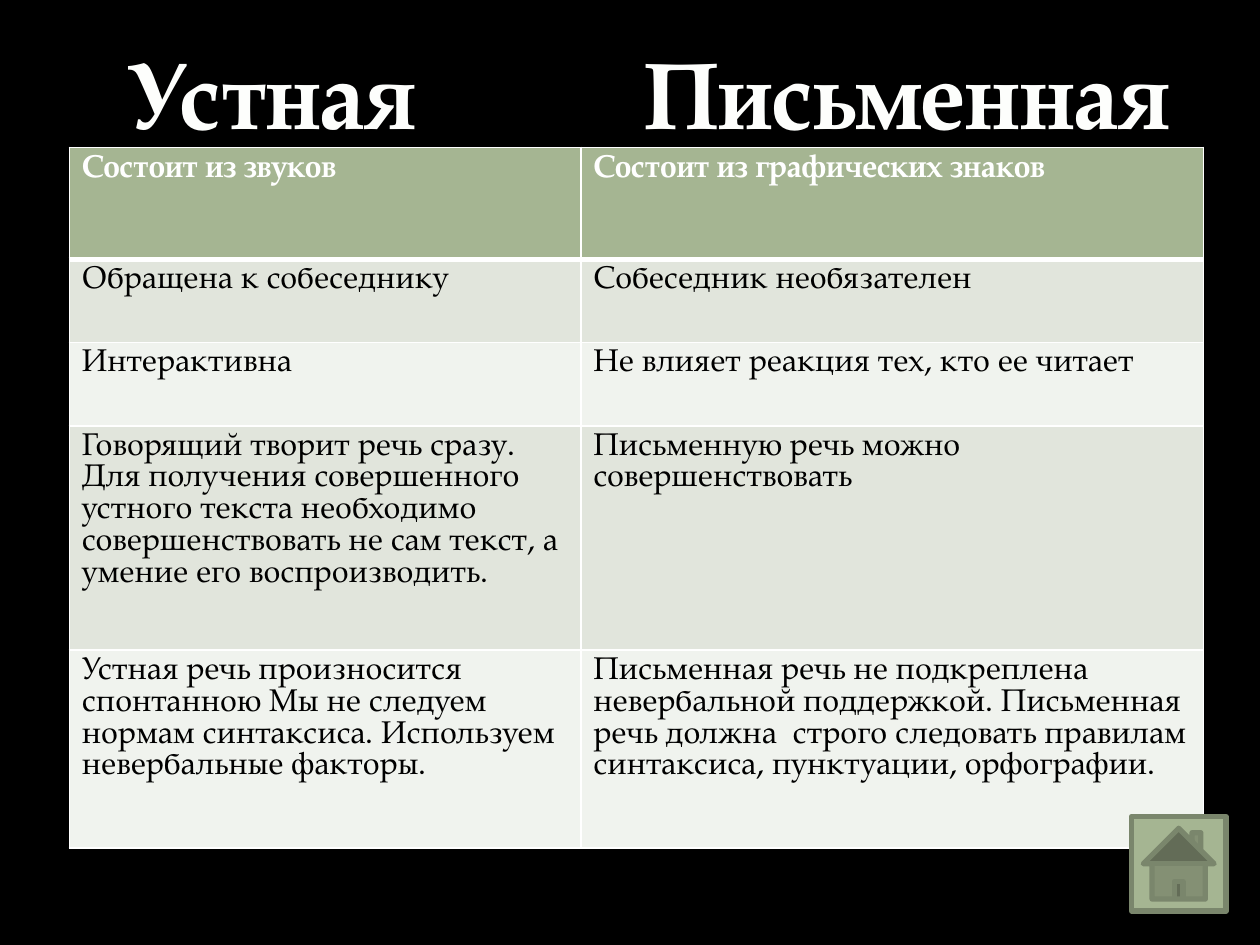
from dataclasses import dataclass

from lxml.etree import SubElement
from pptx import Presentation
from pptx.dml.color import RGBColor
from pptx.enum.shapes import MSO_SHAPE
from pptx.enum.text import MSO_ANCHOR, MSO_AUTO_SIZE, PP_ALIGN
from pptx.oxml.ns import qn
from pptx.util import Inches, Pt


@dataclass(frozen=True)
class Theme:
    font: str = "TeX Gyre Pagella"
    background: str = "000000"
    heading: str = "FDFEFC"
    header_text: str = "FFFFFF"
    body_text: str = "000000"
    border: str = "FFFFFF"
    accent: str = "A5B592"
    accent_dark: str = "7A866C"
    bands: tuple[str, str] = ("E1E5DC", "F0F3EE")
    heading_size: float = 54
    body_size: float = 18
    body_leading: float = 18.2


@dataclass(frozen=True)
class Heading:
    text: str
    left: float
    width: float


@dataclass(frozen=True)
class Row:
    height: float
    spoken: tuple[str, ...]
    written: tuple[str, ...]


THEME = Theme()
HEADINGS = (Heading("Устная", 0.78, 2.74), Heading("Письменная", 4.77, 4.86))
COLUMN_WIDTHS = (4.06, 4.94)
ROWS = (
    Row(0.89, ("Состоит из звуков",), ("Состоит из графических знаков",)),
    Row(0.66, ("Обращена к собеседнику",), ("Собеседник необязателен",)),
    Row(0.66, ("Интерактивна",), ("Не влияет реакция тех, кто ее читает",)),
    Row(
        1.78,
        (
            "Говорящий творит речь сразу.",
            "Для получения совершенного устного текста необходимо "
            "совершенствовать не сам текст, а умение его воспроизводить.",
        ),
        ("Письменную речь можно совершенствовать",),
    ),
    Row(
        1.57,
        (
            "Устная речь произносится спонтанною Мы не следуем нормам "
            "синтаксиса. Используем невербальные факторы.",
        ),
        (
            "Письменная речь не подкреплена невербальной поддержкой. "
            "Письменная речь должна  строго следовать правилам "
            "синтаксиса, пунктуации, орфографии.",
        ),
    ),
)


def rgb(value: str) -> RGBColor:
    return RGBColor.from_string(value)


def add_span(para, text: str, size: float, color: str, bold: bool) -> None:
    span = para.add_run()
    span.text = text
    span.font.name = THEME.font
    span.font.size = Pt(size)
    span.font.bold = bold
    span.font.color.rgb = rgb(color)


def fill_heading(box, heading: Heading) -> None:
    box.left, box.top = Inches(heading.left), Inches(0.23)
    box.width, box.height = Inches(heading.width), Inches(1.01)
    frame = box.text_frame
    frame.word_wrap = False
    frame.auto_size = MSO_AUTO_SIZE.SHAPE_TO_FIT_TEXT
    frame.vertical_anchor = MSO_ANCHOR.TOP
    para = frame.paragraphs[0]
    para.alignment = PP_ALIGN.CENTER
    para.line_spacing = 1.0
    para.space_before = Pt(0)
    add_span(para, heading.text, THEME.heading_size, THEME.heading, True)


def set_borders(cell, bottom: float) -> None:
    properties = cell._tc.get_or_add_tcPr()
    sides = {"lnL": 1, "lnR": 1, "lnT": 1, "lnB": bottom}
    for position, (side, width) in enumerate(sides.items()):
        line = SubElement(properties, qn(f"a:{side}"), w=str(Pt(width)))
        fill = SubElement(line, qn("a:solidFill"))
        SubElement(fill, qn("a:srgbClr"), val=THEME.border)
        properties.insert(position, line)


def fill_cell(cell, paragraphs: tuple[str, ...], row_index: int) -> None:
    header = row_index == 0
    cell.fill.solid()
    cell.fill.fore_color.rgb = rgb(
        THEME.accent if header else THEME.bands[(row_index - 1) % 2]
    )
    set_borders(cell, bottom=3 if header else 1)
    frame = cell.text_frame
    for index, text in enumerate(paragraphs):
        para = frame.add_paragraph() if index else frame.paragraphs[0]
        para.line_spacing = Pt(THEME.body_leading)
        color = THEME.header_text if header else THEME.body_text
        add_span(para, text, THEME.body_size, color, header)


def add_comparison(page) -> None:
    height = sum(row.height for row in ROWS)
    table = page.shapes.add_table(
        len(ROWS), len(COLUMN_WIDTHS), Inches(0.55), Inches(1.17),
        Inches(sum(COLUMN_WIDTHS)), Inches(height),
    ).table
    for column, width in zip(table.columns, COLUMN_WIDTHS):
        column.width = Inches(width)
    for index, row in enumerate(ROWS):
        table.rows[index].height = Inches(row.height)
        for column, paragraphs in enumerate((row.spoken, row.written)):
            fill_cell(table.cell(index, column), paragraphs, index)


def add_home_button(page) -> None:
    button = page.shapes.add_shape(
        MSO_SHAPE.ACTION_BUTTON_HOME,
        Inches(8.98), Inches(6.48), Inches(0.75), Inches(0.75),
    )
    button.shadow.inherit = False
    button.fill.solid()
    button.fill.fore_color.rgb = rgb(THEME.accent)
    button.line.color.rgb = rgb(THEME.accent_dark)
    button.line.width = Pt(3)


def main() -> None:
    deck = Presentation()
    deck.slide_width, deck.slide_height = Inches(10), Inches(7.5)
    page = deck.slides.add_slide(deck.slide_layouts[5])
    page.background.fill.solid()
    page.background.fill.fore_color.rgb = rgb(THEME.background)

    # Comparison table
    add_comparison(page)

    # Column headings: the title placeholder and a matching text box
    spoken, written = HEADINGS
    fill_heading(page.shapes.title, spoken)
    fill_heading(page.shapes.add_textbox(0, 0, 0, 0), written)

    # Navigation
    add_home_button(page)

    deck.save("out.pptx")


if __name__ == "__main__":
    main()
